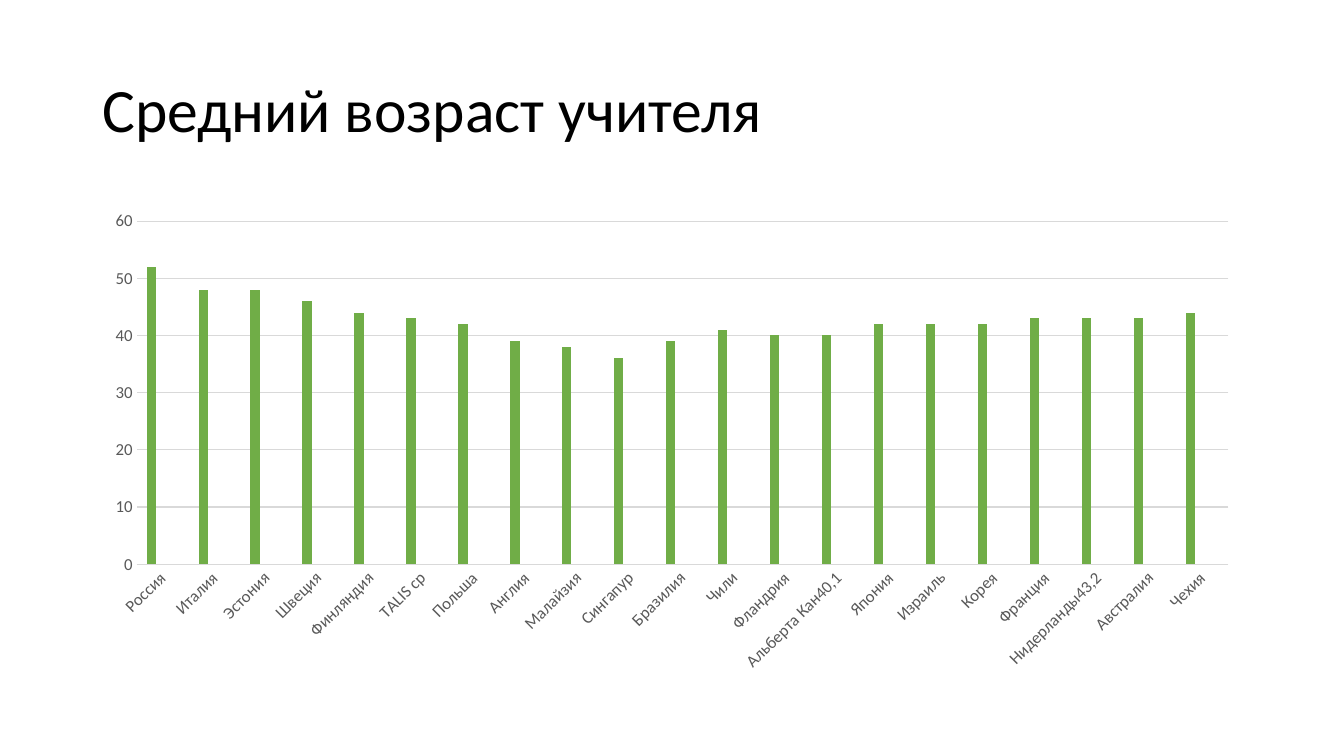
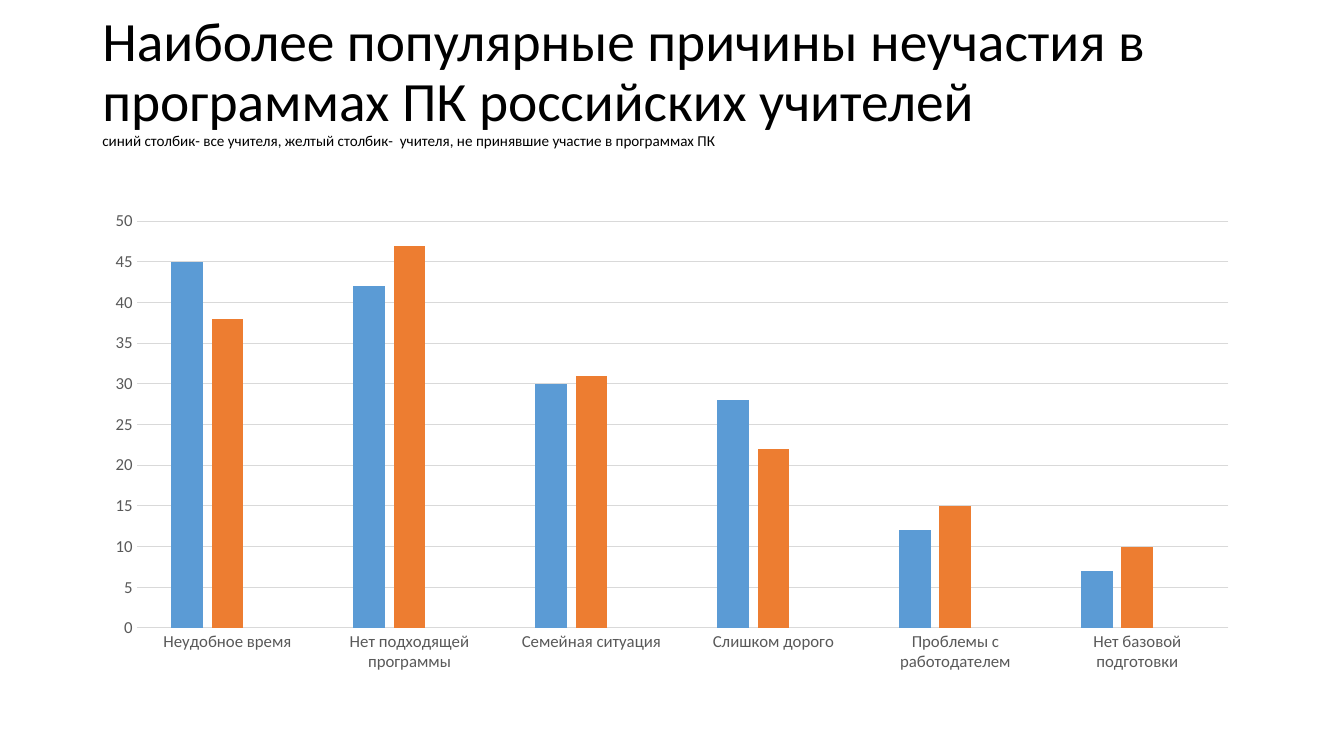
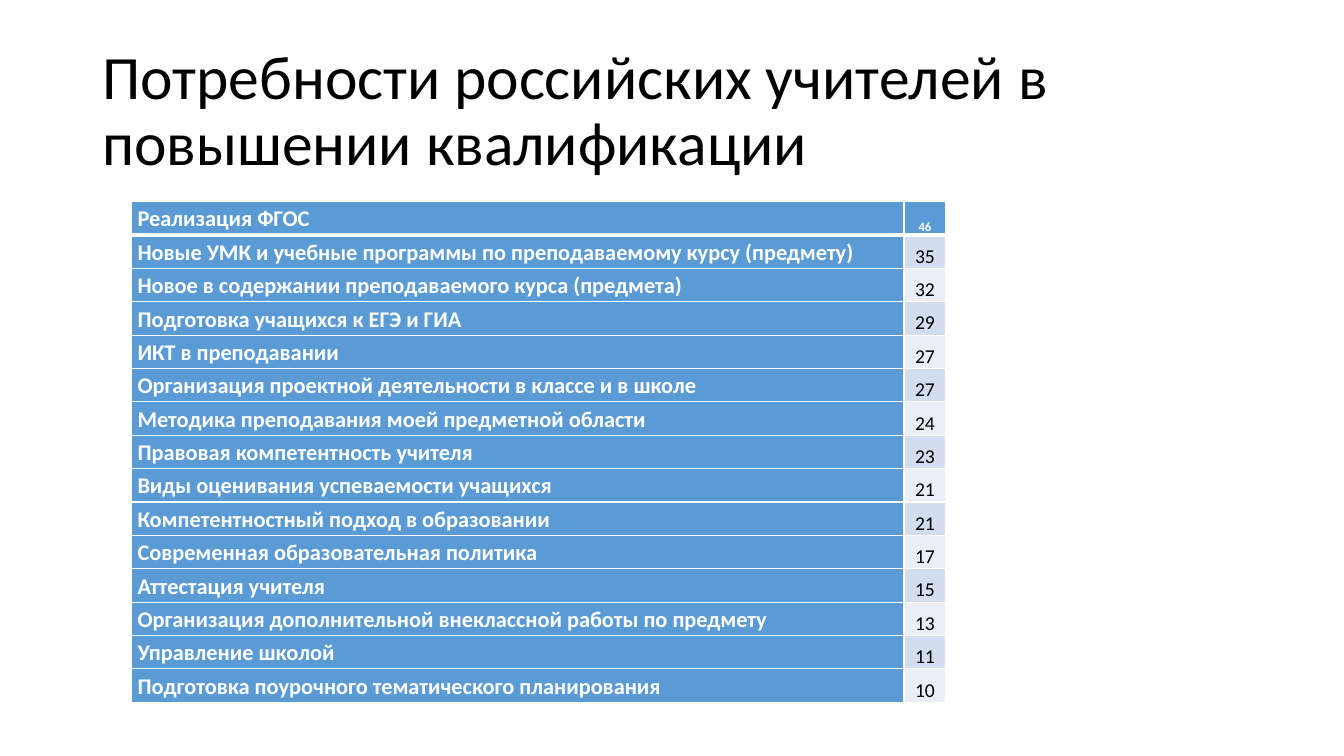
from lxml.etree import SubElement
from pptx import Presentation
from pptx.chart.data import CategoryChartData
from pptx.dml.color import RGBColor
from pptx.enum.chart import XL_CHART_TYPE, XL_TICK_MARK
from pptx.enum.text import MSO_ANCHOR, PP_ALIGN
from pptx.oxml.ns import qn
from pptx.util import Pt

PX = 9525
FONT = "Calibri"
BLACK, WHITE, GREY, RULE = "000000", "FFFFFF", "595959", "D9D9D9"
BLUE, BANDS = "5B9BD5", ("EAEFF7", "D2DEEF")
TITLE_AREA = (88, 38, 1104, 139)
CHART_AREA = (88, 192, 1104, 457)
TABLE_LEFT, TABLE_TOP, TABLE_HEIGHT = 125, 192, 477
COLUMN_WIDTHS = (736, 40)

AGE_TITLE = [("Средний возраст учителя", 44)]
AGE_CHART = {
    "categories": ["Россия", "Италия", "Эстония", "Швеция", "Финляндия", "ТALIS cр",
                   "Польша", "Англия", "Малайзия", "Сингапур", "Бразилия", "Чили",
                   "Фландрия", "Альберта Кан40,1", "Япония", "Израиль", "Корея",
                   "Франция", "Нидерланды43,2", "Австралия", "Чехия"],
    "series": [[52, 48, 48, 46, 44, 43, 42, 39, 38, 36, 39,
                41, 40, 40, 42, 42, 42, 43, 43, 43, 44], [], []],
    "colors": ["70AD47", "4472C4", "FFC000"],
    "maximum": 60, "step": 10, "label_angle": -45,
}

REASONS_TITLE = [
    ("Наиболее популярные причины неучастия в программах ПК российских учителей", 39.6),
    ("синий столбик- все учителя, желтый столбик-  учителя, "
     "не принявшие участие в программах ПК", 10.8),
]
REASONS_CHART = {
    "categories": ["Неудобное время", "Нет подходящей программы", "Семейная ситуация",
                   "Слишком дорого", "Проблемы с работодателем", "Нет базовой подготовки"],
    "series": [[45, 42, 30, 28, 12, 7], [38, 47, 31, 22, 15, 10], []],
    "colors": [BLUE, "ED7D31", "A5A5A5"],
    "maximum": 50, "step": 5, "label_angle": 0,
}

NEEDS_TITLE = [("Потребности российских учителей в повышении квалификации", 44)]
NEEDS = [
    ("Реализация ФГОС", 46),
    ("Новые УМК и учебные программы по преподаваемому курсу (предмету)", 35),
    ("Новое в содержании преподаваемого курса (предмета)", 32),
    ("Подготовка учащихся к ЕГЭ и ГИА", 29),
    ("ИКТ в преподавании", 27),
    ("Организация проектной деятельности в классе и в школе", 27),
    ("Методика преподавания моей предметной области", 24),
    ("Правовая компетентность учителя", 23),
    ("Виды оценивания успеваемости учащихся", 21),
    ("Компетентностный подход в образовании", 21),
    ("Современная образовательная политика", 17),
    ("Аттестация учителя", 15),
    ("Организация дополнительной внеклассной работы по предмету", 13),
    ("Управление школой", 11),
    ("Подготовка поурочного тематического планирования", 10),
]


def rgb(color):
    return RGBColor.from_string(color)


def to_emu(area):
    return [length * PX for length in area]


def style_font(font, size, color, bold=False):
    font.name, font.size, font.bold = FONT, Pt(size), bold
    font.color.rgb = rgb(color)


def add_page(deck, title, bottom_inset=5):
    """Add a blank slide with its title; a larger bottom inset lifts the text."""
    page = deck.slides.add_slide(deck.slide_layouts[6])
    frame = page.shapes.add_textbox(*to_emu(TITLE_AREA)).text_frame
    frame.word_wrap = True
    frame.vertical_anchor = MSO_ANCHOR.MIDDLE
    frame.margin_bottom = bottom_inset * PX
    frame.text = "\n".join(text for text, size in title)
    for para, (text, size) in zip(frame.paragraphs, title):
        para.line_spacing = 0.9
        style_font(para.font, size, BLACK)
    return page


def style_line(line, color):
    line.color.rgb = rgb(color)
    line.width = Pt(0.75)


def add_column_chart(page, content):
    data = CategoryChartData()
    data.categories = content["categories"]
    for number, values in enumerate(content["series"], 1):
        data.add_series(f"Series {number}", values or [None] * len(content["categories"]))
    chart = page.shapes.add_chart(
        XL_CHART_TYPE.COLUMN_CLUSTERED, *to_emu(CHART_AREA), data).chart
    chart.has_legend = chart.has_title = False
    style_font(chart.font, 10, BLACK)

    plot = chart.plots[0]
    plot.gap_width, plot.overlap, plot.vary_by_categories = 219, -27, False
    for series, color in zip(plot.series, content["colors"]):
        series.format.fill.solid()
        series.format.fill.fore_color.rgb = rgb(color)

    categories, values = chart.category_axis, chart.value_axis
    for axis in (categories, values):
        axis.major_tick_mark = axis.minor_tick_mark = XL_TICK_MARK.NONE
        style_font(axis.tick_labels.font, 12, GREY)
    style_line(categories.format.line, RULE)
    if content["label_angle"]:
        body = categories._element.find(qn("c:txPr")).find(qn("a:bodyPr"))
        body.set("rot", str(content["label_angle"] * 60000))
    values.format.line.fill.background()
    style_line(values.major_gridlines.format.line, RULE)
    values.minimum_scale, values.maximum_scale = 0, content["maximum"]
    values.major_unit = content["step"]


def set_borders(cell, widths):
    """Draw white borders; widths maps a side tag to points, in schema order."""
    properties = cell._tc.get_or_add_tcPr()
    for position, (side, width) in enumerate(widths.items()):
        line = SubElement(properties, qn(f"a:{side}"), w=str(Pt(width)))
        fill = SubElement(line, qn("a:solidFill"))
        SubElement(fill, qn("a:srgbClr"), val=WHITE)
        properties.insert(position, line)


def fill_cell(cell, text, fill, size, color, bold, anchor, align):
    cell.text = text
    cell.fill.solid()
    cell.fill.fore_color.rgb = rgb(fill)
    cell.vertical_anchor = anchor
    cell.margin_left = cell.margin_right = 6 * PX
    cell.margin_top = cell.margin_bottom = 0
    para = cell.text_frame.paragraphs[0]
    para.line_spacing, para.alignment = 1.07, align
    style_font(para.font, size, color, bold)


def add_needs_table(page):
    area = (TABLE_LEFT, TABLE_TOP, sum(COLUMN_WIDTHS), TABLE_HEIGHT)
    table = page.shapes.add_table(len(NEEDS), len(COLUMN_WIDTHS), *to_emu(area)).table
    table.first_row = table.horz_banding = False
    for column, width in zip(table.columns, COLUMN_WIDTHS):
        column.width = width * PX
    for index, (need, share) in enumerate(NEEDS):
        header = index == 0
        label, number = table.cell(index, 0), table.cell(index, 1)
        fill_cell(label, need, BLUE, 16, WHITE, True, MSO_ANCHOR.MIDDLE, PP_ALIGN.LEFT)
        look = (BLUE, 9, WHITE, True) if header else (BANDS[index % 2], 14, BLACK, False)
        fill_cell(number, str(share), *look, MSO_ANCHOR.BOTTOM, PP_ALIGN.CENTER)
        widths = {"lnL": 1, "lnR": 1, "lnT": 3 if index == 1 else 1, "lnB": 3 if header else 1}
        for cell in (label, number):
            set_borders(cell, widths)


def main():
    deck = Presentation()
    deck.slide_width, deck.slide_height = to_emu((1280, 720))
    add_column_chart(add_page(deck, AGE_TITLE), AGE_CHART)
    add_column_chart(add_page(deck, REASONS_TITLE, bottom_inset=64), REASONS_CHART)
    add_needs_table(add_page(deck, NEEDS_TITLE))
    deck.save("out.pptx")


if __name__ == "__main__":
    main()
